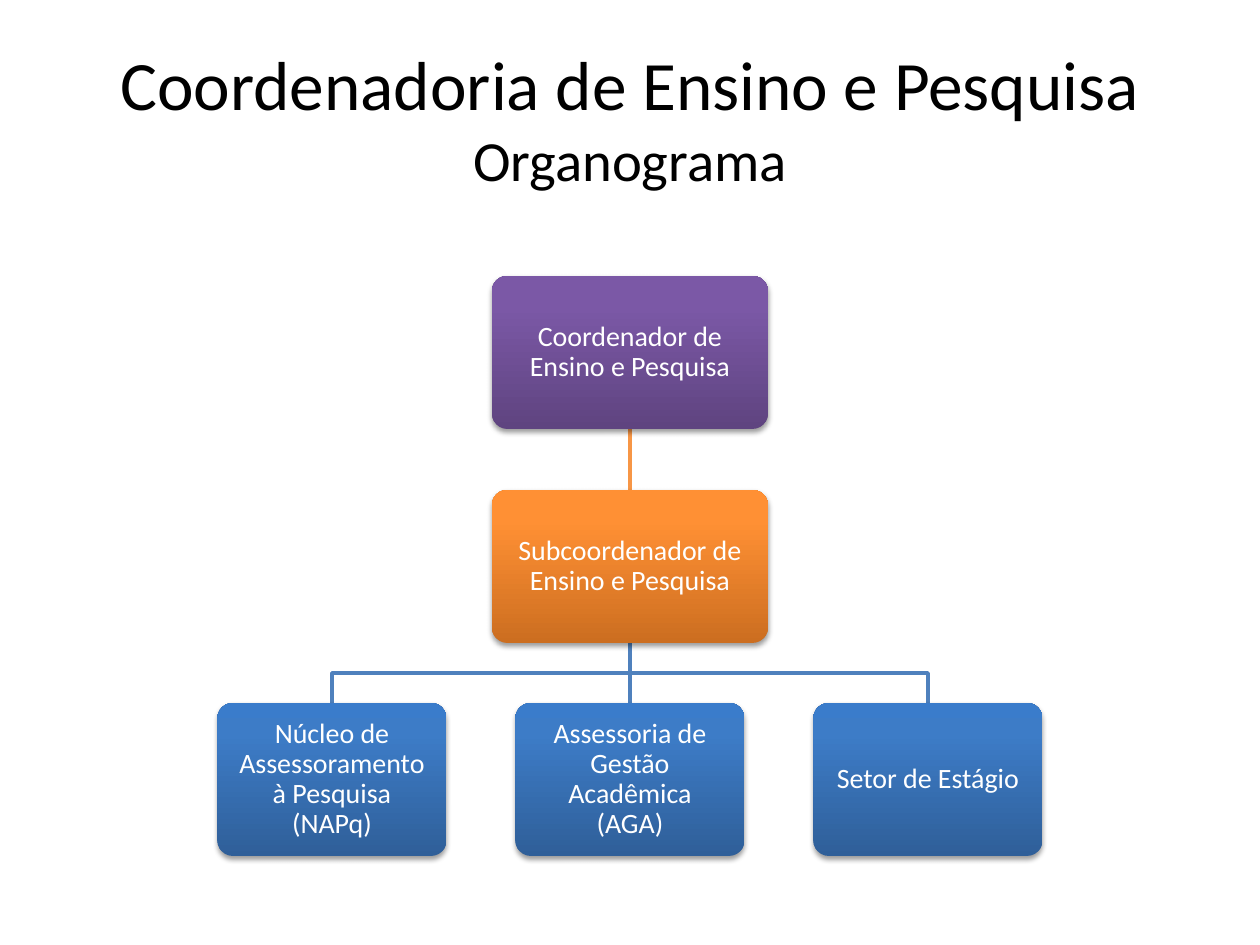
"""Builds the organisation chart of a teaching and research office."""
from dataclasses import dataclass

from lxml.etree import SubElement
from copy import deepcopy
from pptx import Presentation
from pptx.dml.color import RGBColor as Rgb
from pptx.enum.shapes import MSO_CONNECTOR as Connector, MSO_SHAPE as Preset
from pptx.enum.text import MSO_ANCHOR as Anchor, MSO_AUTO_SIZE as AutoSize, PP_ALIGN as Align
from pptx.oxml.ns import qn
from pptx.util import Pt

EMU_PER_PX = 914400 / 126


def px(length):
    return round(length * EMU_PER_PX)


@dataclass(frozen=True)
class Theme:
    font: str = "Calibri"
    ink: str = "000000"
    paper: str = "FFFFFF"
    orange: str = "F79646"
    blue: str = "4F81BD"
    head_grade: tuple = ("5F4480", "7B58A6", "7C57A8")
    deputy_grade: tuple = ("CC6E20", "FF9034", "FF9136")
    unit_grade: tuple = ("2F5F99", "3D7CC7", "3A7CCB")
    grade_stops: tuple = (0, 0.8, 1)
    title_size: float = 39.6
    subtitle_size: float = 32.4
    box_size: float = 16
    line_width: float = 2


class OrgChart:
    def __init__(self, theme):
        self.theme = theme
        self.deck = Presentation()
        self.deck.slide_width, self.deck.slide_height = px(1260), px(945)
        self.slide = self.deck.slides.add_slide(self.deck.slide_layouts[5])

    def run(self, paragraph, words, size, color):
        run = paragraph.add_run()
        run.text = words
        run.font.name = self.theme.font
        run.font.size = Pt(size)
        run.font.color.rgb = Rgb.from_string(color)

    def title(self, heading, subheading, left, top, width, height):
        title = self.slide.shapes.title
        title.left, title.top, title.width, title.height = map(px, (left, top, width, height))
        title.text_frame.auto_size = AutoSize.NONE
        title.text_frame.vertical_anchor = Anchor.MIDDLE
        paragraph = title.text_frame.paragraphs[0]
        paragraph.alignment = Align.CENTER
        self.run(paragraph, heading, self.theme.title_size, self.theme.ink)
        paragraph.add_line_break()
        self.run(paragraph, subheading, self.theme.subtitle_size, self.theme.ink)

    def grade(self, box, colors):
        box.fill.gradient()
        box.fill.gradient_angle = 90
        stop_list = box.fill.gradient_stops
        first = box._element.spPr.find(".//" + qn("a:gs"))
        first.addnext(deepcopy(first))
        stop_list = box.fill.gradient_stops
        for stop, position, color in zip(stop_list, self.theme.grade_stops, colors):
            stop.position = position
            stop.color.rgb = Rgb.from_string(color)

    def shade(self, box):
        box.shadow.inherit = False
        effects = box._element.spPr.find(qn("a:effectLst"))
        shadow = SubElement(effects, qn("a:outerShdw"), blurRad=str(Pt(3.1)),
                            dist=str(Pt(1.6)), dir="5400000", rotWithShape="0")
        tone = SubElement(shadow, qn("a:srgbClr"), val=self.theme.ink)
        SubElement(tone, qn("a:alpha"), val="38000")

    def box(self, words, center, top, width, height, colors):
        box = self.slide.shapes.add_shape(
            Preset.ROUNDED_RECTANGLE, px(center - width / 2), px(top), px(width), px(height))
        box.adjustments[0] = 0.1
        self.grade(box, colors)
        box.line.fill.background()
        self.shade(box)
        frame = box.text_frame
        frame.word_wrap = True
        frame.vertical_anchor = Anchor.MIDDLE
        frame.margin_left = frame.margin_right = px(13)
        frame.margin_top = frame.margin_bottom = px(13)
        paragraph = frame.paragraphs[0]
        paragraph.alignment = Align.CENTER
        paragraph.line_spacing = 0.9
        self.run(paragraph, words, self.theme.box_size, self.theme.paper)

    def stroke(self, link, color):
        link.line.color.rgb = Rgb.from_string(color)
        link.line.width = Pt(self.theme.line_width)

    def stem(self, center, top, bottom, color):
        stem = self.slide.shapes.add_connector(
            Connector.STRAIGHT, px(center), px(top), px(center), px(bottom))
        self.stroke(stem, color)
        SubElement(stem._element.spPr, qn("a:effectLst"))

    def branch(self, start, end, top, bottom, color):
        middle = (top + bottom) / 2
        outline = self.slide.shapes.build_freeform(start, top, scale=EMU_PER_PX)
        outline.add_line_segments([(start, middle), (end, middle), (end, bottom)], close=False)
        branch = outline.convert_to_shape()
        branch.fill.background()
        branch.shadow.inherit = False
        self.stroke(branch, color)


def main():
    theme = Theme()
    chart = OrgChart(theme)
    chart.title("Coordenadoria de Ensino e Pesquisa", "Organograma", 63, 38, 1134, 158)

    axis, box_height, lead_width, unit_width, unit_pitch = 630, 153, 276, 229, 298
    head_top, deputy_top, unit_top = 276, 490, 703
    chart.stem(axis, head_top + box_height, deputy_top, theme.orange)
    chart.box("Coordenador de Ensino e Pesquisa", axis, head_top,
              lead_width, box_height, theme.head_grade)

    units = ("Núcleo de Assessoramento à Pesquisa (NAPq)",
             "Assessoria de Gestão Acadêmica (AGA)",
             "Setor de Estágio")
    deputy_bottom = deputy_top + box_height
    for column, unit in enumerate(units, start=-1):
        center = axis + column * unit_pitch
        if column:
            chart.branch(axis, center, deputy_bottom, unit_top, theme.blue)
        else:
            chart.stem(axis, deputy_bottom, unit_top, theme.blue)
        chart.box(unit, center, unit_top, unit_width, box_height, theme.unit_grade)
    chart.box("Subcoordenador de Ensino e Pesquisa", axis, deputy_top,
              lead_width, box_height, theme.deputy_grade)
    chart.deck.save("out.pptx")


if __name__ == "__main__":
    main()
